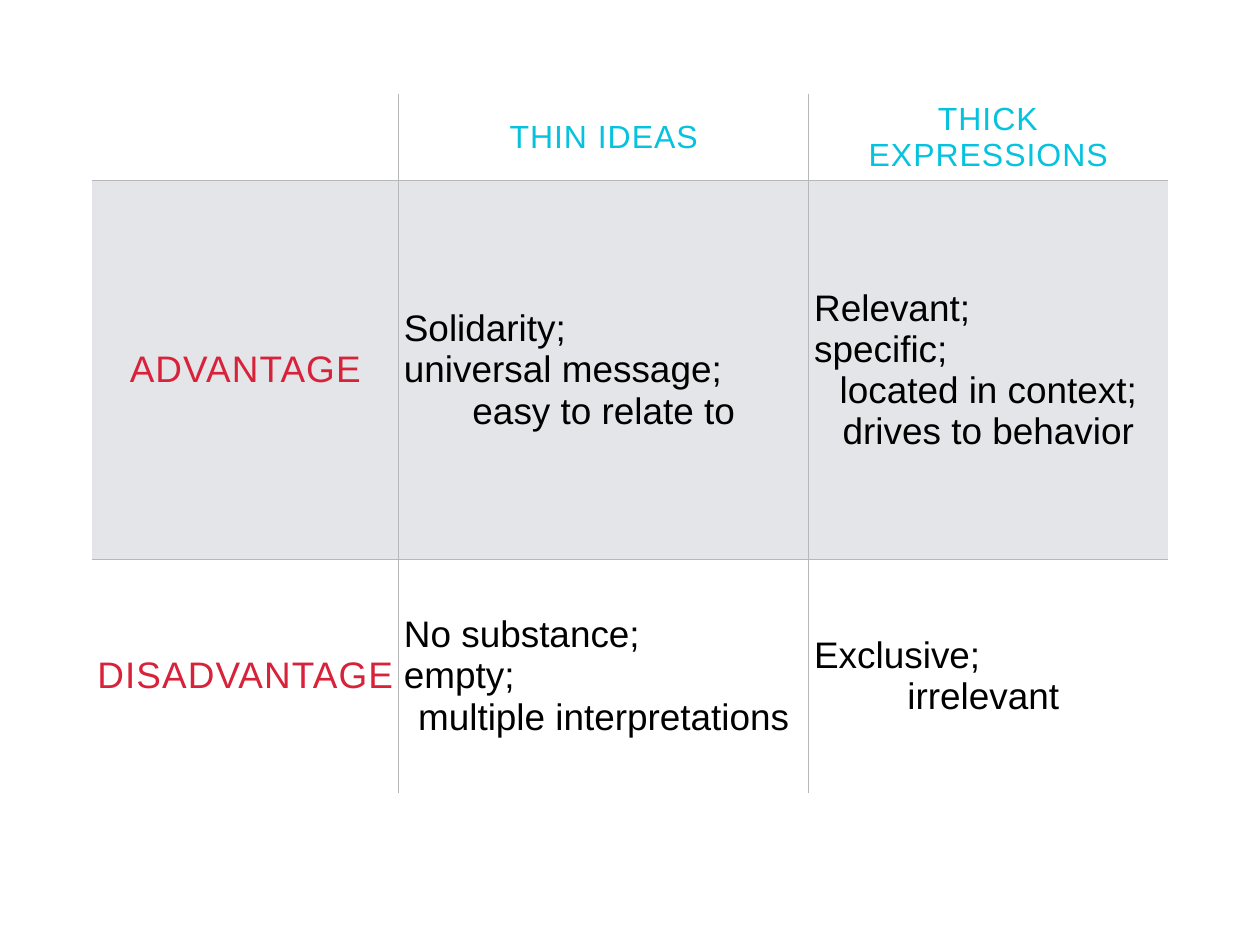
from lxml.etree import SubElement
from pptx import Presentation
from pptx.dml.color import RGBColor
from pptx.enum.text import MSO_ANCHOR, PP_ALIGN
from pptx.oxml.ns import qn
from pptx.util import Cm, Pt

COLORS = {
    "heading": "05C3DE",
    "label": "D8223A",
    "body": "000000",
    "plain": "FFFFFF",
    "band": "E3E5E8",
    "rule": "B8B8B8",
}
# Font size and letter spacing in points
TEXT_STYLES = {"heading": (26, 0.8), "label": (30, 0.9), "body": (30, 0)}
NO_TABLE_STYLE = "{2D5ABB26-0587-4C30-8999-92F81FD0307C}"
COLUMN_WIDTHS = [8.79, 11.76, 10.29]
ROW_HEIGHTS = [2.49, 10.87, 6.68]
COMPARISON = [
    [[], ["THIN IDEAS"], ["THICK EXPRESSIONS"]],
    [
        ["ADVANTAGE"],
        ["Solidarity;", "universal message;", "easy to relate to"],
        ["Relevant;", "specific;", "located in context; drives to behavior"],
    ],
    [
        ["DISADVANTAGE"],
        ["No substance;", "empty;", "multiple interpretations"],
        ["Exclusive;", "irrelevant "],
    ],
]


def write_lines(cell, lines, style):
    """Set the last line centred and the lines before it flush left."""
    size, spacing = TEXT_STYLES[style]
    frame = cell.text_frame
    for index, line in enumerate(lines):
        paragraph = frame.paragraphs[0] if index == 0 else frame.add_paragraph()
        is_last = index == len(lines) - 1
        paragraph.alignment = PP_ALIGN.CENTER if is_last else PP_ALIGN.LEFT
        run = paragraph.add_run()
        run.text = line
        run.font.name = "Arial"
        run.font.size = Pt(size)
        run.font.color.rgb = RGBColor.from_string(COLORS[style])
        run._r.get_or_add_rPr().set("spc", str(round(spacing * 100)))


def add_inner_borders(cell, row, column):
    """Rule only the sides that the cell shares with a neighbour."""
    sides = {
        "a:lnL": column > 0,
        "a:lnR": column < len(COLUMN_WIDTHS) - 1,
        "a:lnT": row > 0,
        "a:lnB": row < len(ROW_HEIGHTS) - 1,
    }
    properties = cell._tc.get_or_add_tcPr()
    for tag, is_shared in sides.items():
        if is_shared:
            line = SubElement(properties, qn(tag), w=str(Pt(1)))
            fill = SubElement(line, qn("a:solidFill"))
            SubElement(fill, qn("a:srgbClr"), val=COLORS["rule"])


def format_cell(cell, row, column):
    cell.margin_left = cell.margin_right = Cm(0.15)
    cell.margin_top = cell.margin_bottom = Cm(0.15)
    cell.vertical_anchor = MSO_ANCHOR.MIDDLE
    add_inner_borders(cell, row, column)
    cell.fill.solid()
    background = "band" if row == 1 else "plain"
    cell.fill.fore_color.rgb = RGBColor.from_string(COLORS[background])


def add_comparison_table(slide, left, top):
    shape = slide.shapes.add_table(
        len(ROW_HEIGHTS), len(COLUMN_WIDTHS), left, top,
        Cm(sum(COLUMN_WIDTHS)), Cm(sum(ROW_HEIGHTS)),
    )
    table = shape.table
    table.first_row = table.horz_banding = False
    table._tbl.tblPr.find(qn("a:tableStyleId")).text = NO_TABLE_STYLE
    for column, width in zip(table.columns, COLUMN_WIDTHS):
        column.width = Cm(width)
    for row, height in zip(table.rows, ROW_HEIGHTS):
        row.height = Cm(height)
    for row, entries in enumerate(COMPARISON):
        for column, lines in enumerate(entries):
            cell = table.cell(row, column)
            format_cell(cell, row, column)
            style = "heading" if row == 0 else "label" if column == 0 else "body"
            write_lines(cell, lines, style)


def main():
    presentation = Presentation()
    presentation.slide_width = Cm(36.12)
    presentation.slide_height = Cm(27.1)
    slide = presentation.slides.add_slide(presentation.slide_layouts[6])
    add_comparison_table(slide, Cm(2.64), Cm(2.69))
    presentation.save("out.pptx")


if __name__ == "__main__":
    main()
